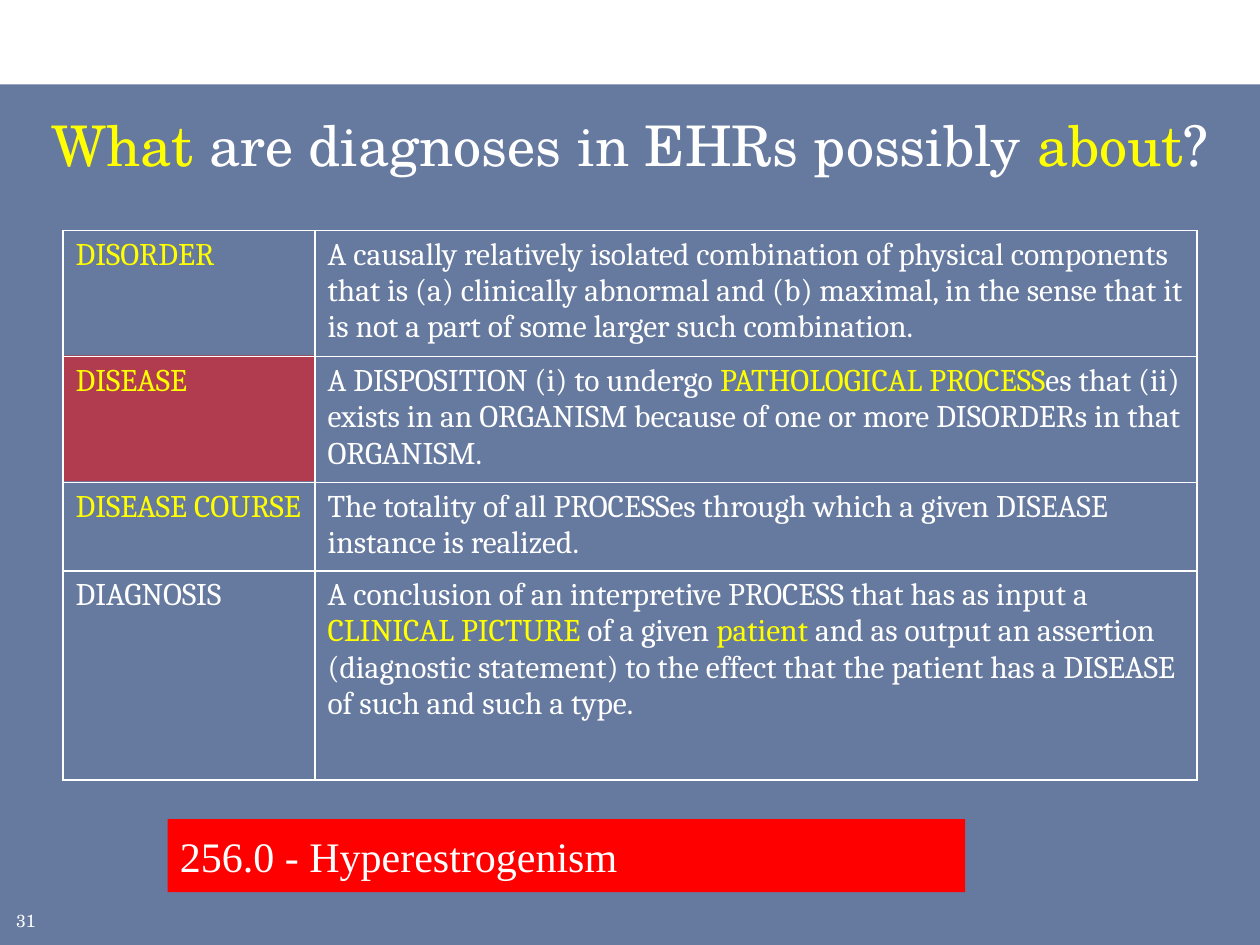
from pptx import Presentation
from pptx.util import Inches, Pt
from pptx.dml.color import RGBColor as RGB
from pptx.enum.shapes import MSO_SHAPE as Shape
from pptx.enum.text import PP_ALIGN as Align, MSO_ANCHOR as Anchor
from pptx.oxml.ns import qn
from lxml.etree import SubElement as Sub

HUES = {"white": "FFFFFF", "navy": "002060", "red": "FF0000", "yellow": "FFFF00"}
SCHOLA, CAMBRIA, TIMES = "TeX Gyre Schola", "Cambria", "Times New Roman"

# Text between bars is yellow
TITLE = "|What| are diagnoses in EHRs possibly |about|?"
CODE = "256.0 - Hyperestrogenism"
PAGE = "31"
TERMS = [
    ("|DISORDER|",
     "A causally relatively isolated combination of physical components that is "
     "(a) clinically abnormal and (b) maximal, in the sense that it is not a part "
     "of some larger such combination."),
    ("|DISEASE|",
     "A DISPOSITION (i) to undergo |PATHOLOGICAL PROCESS|es that (ii) exists in an "
     "ORGANISM because of one or more DISORDERs in that ORGANISM."),
    ("|DISEASE COURSE|",
     "The totality of all PROCESSes through which a given DISEASE instance is realized."),
    ("DIAGNOSIS",
     "A conclusion of an interpretive PROCESS that has as input a |CLINICAL PICTURE |"
     "of a given |patient| and as output an assertion (diagnostic statement) to the "
     "effect that the patient has a DISEASE of such and such a type."),
]
COLS = [2, 7]
ROWS = [0.99, 1, 0.69, 1.66]
LEFT, TOP = 0.5, 1.83


def hue(name):
    return RGB.from_string(HUES[name])


def write(frame, text, size, face):
    para = frame.paragraphs[0]
    for i, part in enumerate(text.split("|")):
        if part:
            run = para.add_run()
            run.text = part
            run.font.size = Pt(size)
            run.font.name = face
            run.font.color.rgb = hue("yellow" if i % 2 else "white")
    return para


def block(slide, box, name, alpha=None):
    rect = slide.shapes.add_shape(Shape.RECTANGLE, *map(Inches, box))
    rect.shadow.inherit = False
    rect.line.fill.background()
    rect.fill.solid()
    rect.fill.fore_color.rgb = hue(name)
    if alpha:
        tone = rect.fill._xPr.find(".//" + qn("a:srgbClr"))
        Sub(tone, qn("a:alpha")).set("val", str(alpha * 1000))
    return rect


def label(slide, box, text, size, face):
    frame = slide.shapes.add_textbox(*map(Inches, box)).text_frame
    frame.word_wrap = True
    return write(frame, text, size, face)


def border(cell):
    props = cell._tc.get_or_add_tcPr()
    for i, side in enumerate(("lnL", "lnR", "lnT", "lnB")):
        line = props.makeelement(qn("a:" + side), {"w": str(Pt(1))})
        fill = Sub(line, qn("a:solidFill"))
        Sub(fill, qn("a:srgbClr")).set("val", HUES["white"])
        props.insert(i, line)


def grid(slide):
    box = map(Inches, (LEFT, TOP, sum(COLS), sum(ROWS)))
    table = slide.shapes.add_table(len(ROWS), len(COLS), *box).table
    table.first_row = table.horz_banding = False
    for col, width in zip(table.columns, COLS):
        col.width = Inches(width)
    for row, tall, terms in zip(table.rows, ROWS, TERMS):
        row.height = Inches(tall)
        for cell, text in zip(row.cells, terms):
            cell.fill.background()
            border(cell)
            write(cell.text_frame, text, 18, CAMBRIA)


def main():
    deck = Presentation()
    deck.slide_width, deck.slide_height = Inches(10), Inches(7.5)
    slide = deck.slides.add_slide(deck.slide_layouts[6])
    block(slide, (0, 0.67, 10, 6.83), "navy", 60)
    label(slide, (0.03, 7.17, 0.39, 0.25), PAGE, 10, SCHOLA)
    block(slide, (LEFT, TOP + ROWS[0], COLS[0], ROWS[1]), "red", 50)
    label(slide, (0.25, 0.83, 9.5, 0.83), TITLE, 32, SCHOLA).alignment = Align.CENTER
    grid(slide)
    frame = block(slide, (1.33, 6.5, 6.33, 0.58), "red").text_frame
    frame.vertical_anchor = Anchor.MIDDLE
    write(frame, CODE, 24, TIMES).alignment = Align.LEFT
    deck.save("out.pptx")


if __name__ == "__main__":
    main()
